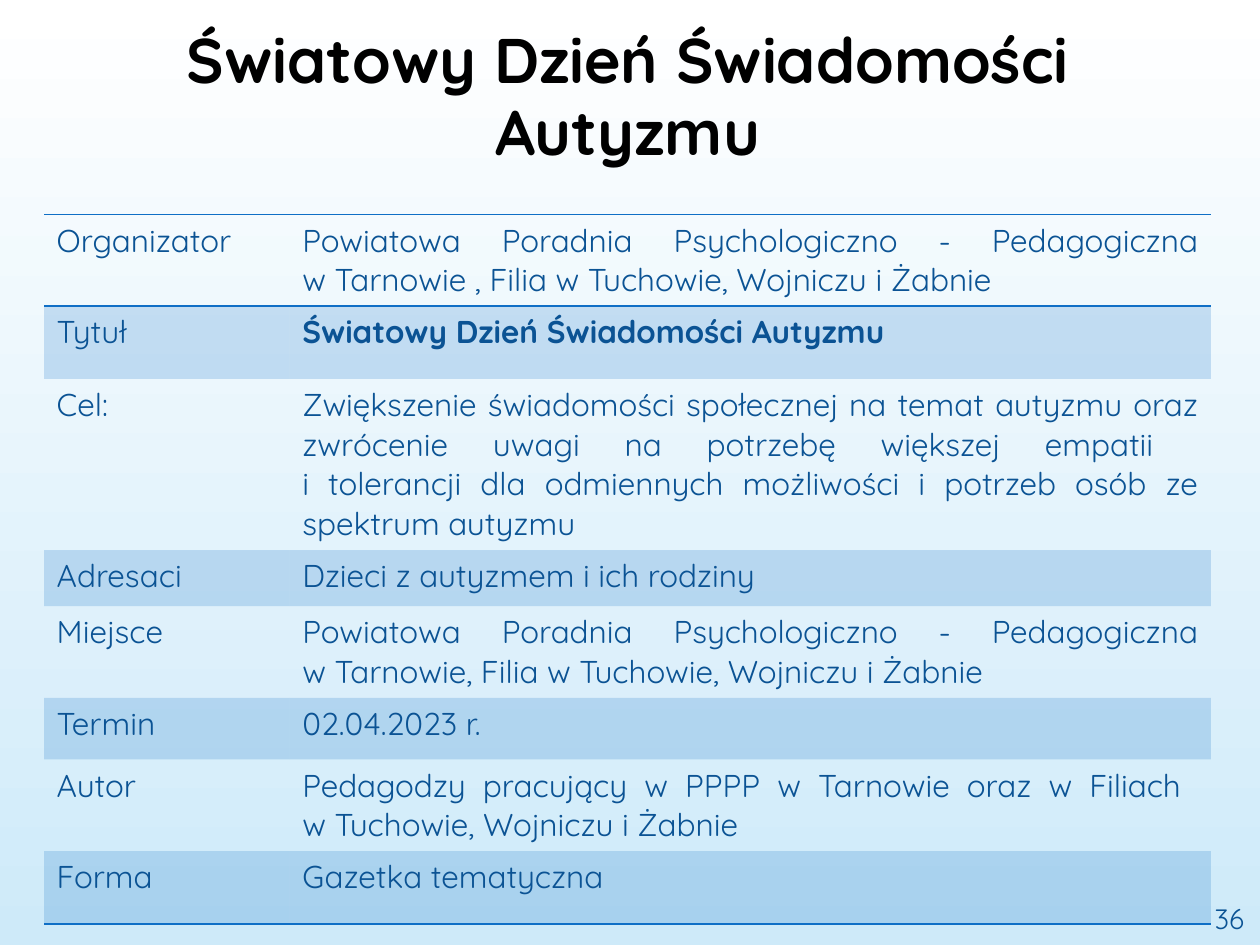
from lxml import etree
from pptx import Presentation, util as u
from pptx.dml.color import RGBColor
from pptx.enum import text
from pptx.oxml import ns

FONT = "Quicksand"
COLORS = {"title": "000000", "body": "0B5394", "accent": "0F6FC6",
          "sky_top": "FFFFFF", "sky_bottom": "CEEAF9"}
NO_STYLE = "{2D5ABB26-0587-4C30-8999-92F81FD0307C}"

# label, description, row height in cm
EVENT = [
    ("Organizator", "Powiatowa Poradnia Psychologiczno - Pedagogiczna\n"
     "w Tarnowie , Filia w Tuchowie, Wojniczu i Żabnie", 1.85),
    ("Tytuł", "Światowy Dzień Świadomości Autyzmu", 1.47),
    ("Cel:", "Zwiększenie świadomości społecznej na temat autyzmu oraz "
     "zwrócenie uwagi na potrzebę większej empatii \n"
     "i tolerancji dla odmiennych możliwości i potrzeb osób ze spektrum autyzmu", 3.45),
    ("Adresaci", "Dzieci z autyzmem i ich rodziny", 1.13),
    ("Miejsce", "Powiatowa Poradnia Psychologiczno - Pedagogiczna\n"
     "w Tarnowie, Filia w Tuchowie, Wojniczu i Żabnie", 1.85),
    ("Termin", "02.04.2023 r.", 1.24),
    ("Autor", "Pedagodzy pracujący w PPPP w Tarnowie oraz w Filiach \n"
     "w Tuchowie, Wojniczu i Żabnie", 1.85),
    ("Forma", "Gazetka tematyczna", 1.47),
]


def rgb(name):
    return RGBColor.from_string(COLORS[name])


def write(paragraph, content, size, color="body", bold=False,
          align=text.PP_ALIGN.LEFT):
    paragraph.alignment = align
    for number, line in enumerate(content.split("\n")):
        if number:
            paragraph.add_line_break()
        run = paragraph.add_run()
        run.text = line
        run.font.name = FONT
        run.font.size = u.Pt(size)
        run.font.bold = bold
        run.font.color.rgb = rgb(color)
    # Line breaks take the size of the text around them
    for line_break in paragraph._p.findall(ns.qn("a:br")):
        etree.SubElement(line_break, ns.qn("a:rPr"), sz=str(size * 100))


def add_background(slide):
    fill = slide.background.fill
    fill.gradient()
    fill.gradient_angle = 270
    for stop, color, position in zip(fill.gradient_stops,
                                     ("sky_top", "sky_bottom"), (0, 1)):
        stop.color.rgb = rgb(color)
        stop.position = position


def add_title(slide, left, top, width, height):
    frame = slide.shapes.add_textbox(left, top, width, height).text_frame
    frame.word_wrap = True
    frame.margin_top = u.Cm(0.2)
    heading = frame.paragraphs[0]
    heading.line_spacing = 0.95
    write(heading, "Światowy Dzień Świadomości Autyzmu", 36, "title", True,
          text.PP_ALIGN.CENTER)


def add_page_number(slide, left, top, width, height):
    frame = slide.shapes.add_textbox(left, top, width, height).text_frame
    frame.word_wrap = True
    frame.vertical_anchor = text.MSO_ANCHOR.MIDDLE
    write(frame.paragraphs[0], "36", 16, align=text.PP_ALIGN.RIGHT)


def add_rule(cell, tag, position):
    """Draw one border of a cell; borders come before the fill."""
    line = etree.Element(ns.qn(tag), w=str(u.Pt(1)))
    solid = etree.SubElement(line, ns.qn("a:solidFill"))
    etree.SubElement(solid, ns.qn("a:srgbClr"), val=COLORS["accent"])
    cell._tc.get_or_add_tcPr().insert(position, line)


def shade(cell, banded):
    if not banded:
        cell.fill.background()
        return
    cell.fill.solid()
    cell.fill.fore_color.rgb = rgb("accent")
    color = cell._tc.tcPr.find(".//" + ns.qn("a:srgbClr"))
    etree.SubElement(color, ns.qn("a:alpha"), val="20000")


def add_event_table(slide, left, top, width, height):
    table = slide.shapes.add_table(len(EVENT), 2, left, top, width, height).table
    table.first_row = table.horz_banding = False
    table._tbl.tblPr.find(ns.qn("a:tableStyleId")).text = NO_STYLE
    label_width = u.Cm(4.95)
    table.columns[0].width = label_width
    table.columns[1].width = width - label_width

    aligns = (text.PP_ALIGN.LEFT, text.PP_ALIGN.JUSTIFY)
    for row, (label, description, row_height) in enumerate(EVENT):
        table.rows[row].height = u.Cm(row_height)
        for column, content in enumerate((label, description)):
            cell = table.cell(row, column)
            bold = label == "Tytuł" and column == 1
            write(cell.text_frame.paragraphs[0], content, 18, bold=bold,
                  align=aligns[column])
            shade(cell, banded=row % 2 == 1)
            # Rules frame the first row and close the table
            if row == 0:
                add_rule(cell, "a:lnT", 0)
                add_rule(cell, "a:lnB", 1)
            elif row == len(EVENT) - 1:
                add_rule(cell, "a:lnB", 0)


def main():
    deck = Presentation()
    deck.slide_width, deck.slide_height = u.Cm(25.4), u.Cm(19.05)
    slide = deck.slides.add_slide(deck.slide_layouts[6])
    add_background(slide)
    add_title(slide, u.Cm(3.5), u.Cm(0.33), u.Cm(18.31), u.Cm(3.56))
    add_page_number(slide, u.Cm(23.7), u.Cm(18.01), u.Cm(1.63), u.Cm(1.02))
    add_event_table(slide, u.Cm(0.89), u.Cm(4.32), u.Cm(23.52), u.Cm(14.31))
    deck.save("out.pptx")


if __name__ == "__main__":
    main()
